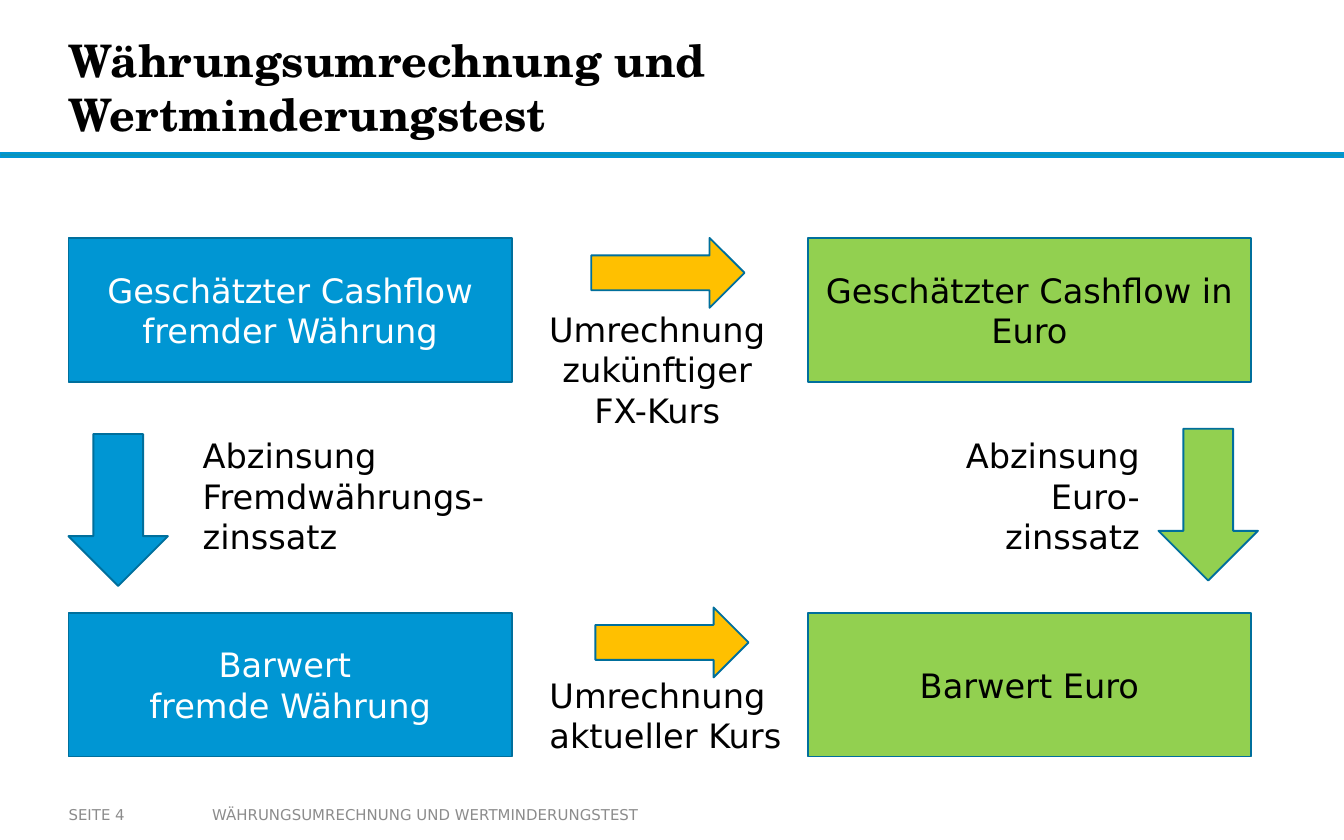
from dataclasses import dataclass

from pptx import Presentation
from pptx.dml.color import RGBColor
from pptx.enum.shapes import MSO_SHAPE
from pptx.enum.text import MSO_ANCHOR, MSO_AUTO_SIZE, PP_ALIGN
from pptx.util import Emu, Pt

RECT = MSO_SHAPE.RECTANGLE
RIGHT = MSO_SHAPE.RIGHT_ARROW
DOWN = MSO_SHAPE.DOWN_ARROW
MIDDLE = MSO_ANCHOR.MIDDLE
GROW = MSO_AUTO_SIZE.SHAPE_TO_FIT_TEXT
START, CENTER, END = PP_ALIGN.LEFT, PP_ALIGN.CENTER, PP_ALIGN.RIGHT
SCALE = 9144


@dataclass(frozen=True)
class Theme:
    """Colours, fonts and type sizes of the slide."""
    blue: str = "0096D3"
    teal: str = "0C94B7"
    edge: str = "006F9C"
    green: str = "92D050"
    amber: str = "FFC000"
    black: str = "000000"
    white: str = "FFFFFF"
    gray: str = "8C8C8C"
    serif: str = "TeX Gyre Schola"
    sans: str = "DejaVu Sans"
    head: int = 24
    body: int = 18
    foot: int = 8


THEME = Theme()


def px(*values):
    """Turn whole px into EMU."""
    return [Emu(value * SCALE) for value in values]


def style(frame, color, size=THEME.body, face=THEME.sans, bold=False, align=START):
    """Format every paragraph and run of a text frame."""
    for para in frame.paragraphs:
        para.alignment = align
        for run in para.runs:
            font = run.font
            font.name, font.size, font.bold = face, Pt(size), bold
            font.color.rgb = RGBColor.from_string(color)


def add_block(slide, kind, area, fill, edge=THEME.edge):
    """Draw a filled and outlined preset shape."""
    block = slide.shapes.add_shape(kind, *px(*area))
    block.shadow.inherit = False
    block.fill.solid()
    block.fill.fore_color.rgb = RGBColor.from_string(fill)
    block.line.color.rgb = RGBColor.from_string(edge)
    block.line.width = Pt(1)
    return block


def add_card(slide, left, top, text, fill, color):
    """Draw a box with a centred value label."""
    frame = add_block(slide, RECT, (left, top, 330, 107), fill).text_frame
    frame.word_wrap = True
    frame.vertical_anchor = MIDDLE
    frame.text = text
    style(frame, color, align=CENTER)


def add_label(slide, area, text, align):
    """Add an unwrapped label beside an arrow."""
    frame = slide.shapes.add_textbox(*px(*area)).text_frame
    frame.word_wrap = False
    frame.auto_size = GROW
    frame.text = text
    style(frame, THEME.black, align=align)


def add_line(slide, area, text, inset, **look):
    """Add wrapped title or footer text, centred in height."""
    frame = slide.shapes.add_textbox(*px(*area)).text_frame
    frame.word_wrap = True
    frame.vertical_anchor = MIDDLE
    side, edge = px(*inset)
    frame.margin_left = frame.margin_right = side
    frame.margin_top = frame.margin_bottom = edge
    frame.text = text
    style(frame, **look)


def add_frame(slide):
    """Add the title, its rule and the footer."""
    title = "Währungsumrechnung und Wertminderungstest"
    small = {"color": THEME.gray, "size": THEME.foot}
    add_block(slide, RECT, (0, 114, 1000, 3), THEME.teal, THEME.blue)
    add_line(slide, (148, 592, 352, 28), title.upper(), (10, 5), **small)
    add_line(slide, (51, 592, 98, 28), "SEITE 4", (0, 5), **small)
    add_line(slide, (51, 15, 748, 99), title, (0, 0), color=THEME.black,
             size=THEME.head, face=THEME.serif, bold=True)


def main():
    """Build and save the slide."""
    deck = Presentation()
    deck.slide_width, deck.slide_height = px(1000, 625)
    slide = deck.slides.add_slide(deck.slide_layouts[6])
    add_frame(slide)

    rows = (
        (177, "Geschätzter Cashflow fremder Währung", "Geschätzter Cashflow in Euro"),
        (456, "Barwert \vfremde Währung", "Barwert Euro"),
    )
    for top, source, target in rows:
        add_card(slide, 51, top, source, THEME.blue, THEME.white)
        add_card(slide, 601, top, target, THEME.green, THEME.black)

    for left, top in ((440, 177), (443, 452)):
        add_block(slide, RIGHT, (left, top, 114, 52), THEME.amber)
    for left, top, fill in ((51, 323, THEME.blue), (862, 319, THEME.green)):
        add_block(slide, DOWN, (left, top, 74, 113), fill)

    labels = (
        ((398, 225, 182, 101), "Umrechnung\vzukünftiger\vFX-Kurs", CENTER),
        ((141, 319, 235, 101), "Abzinsung\nFremdwährungs-\vzinssatz", START),
        ((399, 497, 197, 71), "Umrechnung\vaktueller Kurs", START),
        ((708, 319, 150, 101), "Abzinsung\nEuro-\nzinssatz", END),
    )
    for area, text, align in labels:
        add_label(slide, area, text, align)

    deck.save("out.pptx")


if __name__ == "__main__":
    main()
